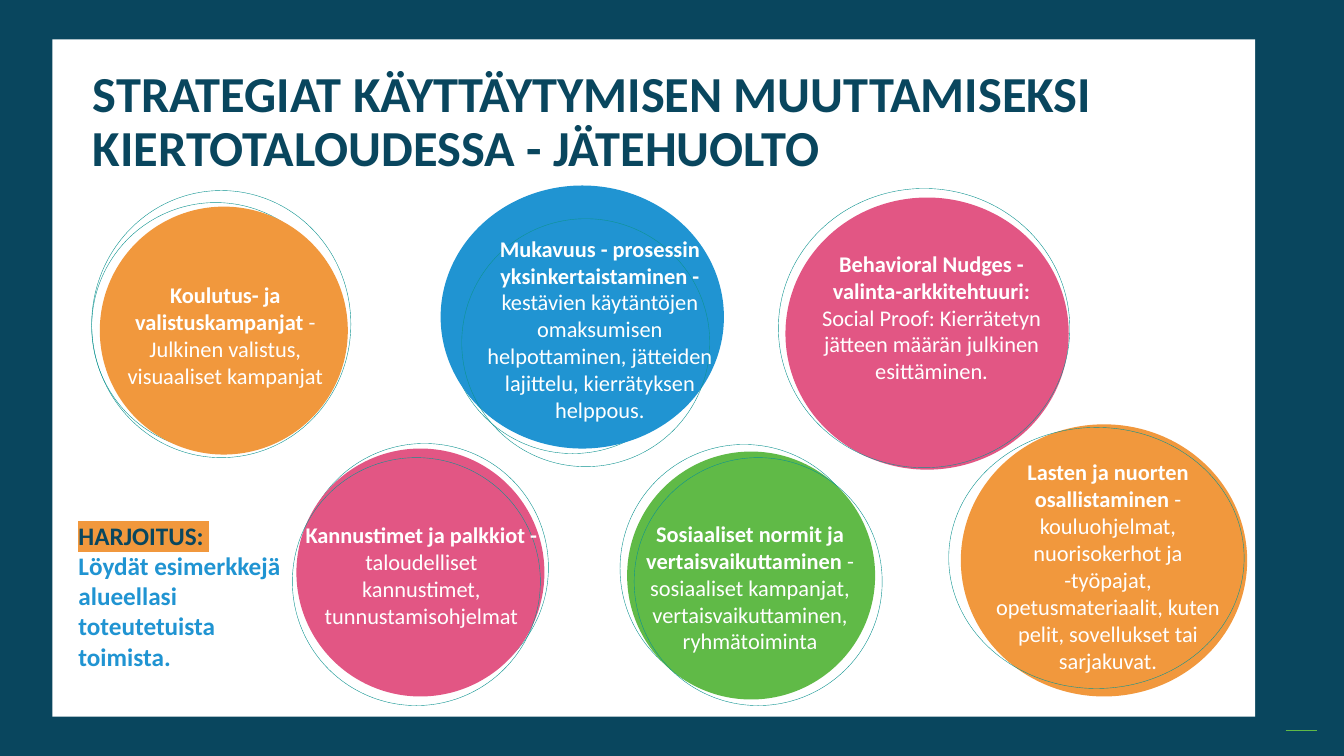
from lxml.etree import SubElement
from pptx import Presentation
from pptx.dml.color import RGBColor
from pptx.enum.shapes import MSO_CONNECTOR, MSO_SHAPE
from pptx.enum.text import MSO_ANCHOR, MSO_AUTO_SIZE, PP_ALIGN
from pptx.oxml.ns import qn
from pptx.util import Inches, Pt

NAVY = RGBColor(0x09, 0x46, 0x5E)
WHITE = RGBColor(0xFF, 0xFF, 0xFF)
TEAL = RGBColor(0x0D, 0x93, 0x90)
ORANGE = RGBColor(0xF1, 0x98, 0x3D)
PINK = RGBColor(0xE2, 0x56, 0x84)
BLUE = RGBColor(0x20, 0x94, 0xD2)
GREEN = RGBColor(0x60, 0xBA, 0x47)
FONT = "Calibri"
SIZE = 2.46

# Each bubble: colour, disc box, back ring, front ring and text box (relative to the disc), bold text, plain text
BUBBLES = [
    (ORANGE, (0.99, 2.05, SIZE, SIZE), (-0.08, -0.04, SIZE, SIZE),
     (-0.08, -0.16, 2.57, 2.65), (-0.03, 0.69, 2.55, 1.18),
     "Koulutus- ja valistuskampanjat ", "- Julkinen valistus, visuaaliset kampanjat"),
    (PINK, (2.94, 4.45, SIZE, SIZE), (0.04, -0.05, SIZE, SIZE),
     (-0.04, 0.09, SIZE, SIZE), (-0.01, 0.67, 2.5, 0.91),
     "Kannustimet ja palkkiot - ", "taloudelliset kannustimet, tunnustamisohjelmat"),
    (BLUE, (4.37, 1.84, 2.81, 2.61), (0.08, 0.2, SIZE, SIZE),
     (0.21, 0.33, SIZE, SIZE), (0.35, 0.44, SIZE, 1.99),
     "Mukavuus - prosessin yksinkertaistaminen - ",
     "kestävien käytäntöjen omaksumisen helpottaminen, jätteiden lajittelu, kierrätyksen helppous."),
    (ORANGE, (9.53, 4.21, 2.84, 2.7), (0.21, 0.13, SIZE, SIZE),
     (-0.12, 0.03, 2.93, 2.59), (0.23, 0.29, SIZE, 2.32),
     "Lasten ja nuorten osallistaminen ",
     "- kouluohjelmat, nuorisokerhot ja -työpajat, opetusmateriaalit, kuten pelit, sovellukset tai sarjakuvat."),
    (GREEN, (6.22, 4.48, SIZE, SIZE), (-0.07, -0.07, SIZE, SIZE),
     (0.07, 0.06, SIZE, SIZE), (-0.01, 0.63, SIZE, 1.78),
     "Sosiaaliset normit ja vertaisvaikuttaminen ",
     "- sosiaaliset kampanjat, vertaisvaikuttaminen, ryhmätoiminta"),
    (PINK, (7.79, 1.96, 2.81, 2.7), (0.11, 0.07, 2.59, SIZE),
     (-0.07, -0.09, 2.89, 2.77), (0.22, 0.47, SIZE, 2.59),
     "Behavioral Nudges - valinta-arkkitehtuuri: ",
     "Social Proof: Kierrätetyn jätteen määrän julkinen esittäminen."),
]


def set_font(paragraph, size, color, bold=None):
    """Give a whole paragraph its font."""
    font = paragraph.font
    font.name, font.size, font.bold = FONT, Pt(size), bold
    font.color.rgb = color


def add_filled(slide, kind, box, color):
    """Add a borderless filled shape."""
    shape = slide.shapes.add_shape(kind, *map(Inches, box))
    shape.shadow.inherit = False
    shape.fill.solid()
    shape.fill.fore_color.rgb = color
    shape.line.fill.background()


def add_ring(slide, box):
    """Add a thin unfilled oval."""
    ring = slide.shapes.add_shape(MSO_SHAPE.OVAL, *map(Inches, box))
    ring.shadow.inherit = False
    ring.fill.background()
    ring.line.color.rgb = TEAL
    ring.line.width = Pt(0.28)


def add_text_frame(slide, box):
    """Add a wrapping text box and return its frame."""
    frame = slide.shapes.add_textbox(*map(Inches, box)).text_frame
    frame.word_wrap = True
    return frame


def add_frame(slide, width, height):
    """Draw the navy border, the white panel and the corner dash."""
    add_filled(slide, MSO_SHAPE.RECTANGLE, (0, 0, width, height), NAVY)
    add_filled(slide, MSO_SHAPE.RECTANGLE, (0.52, 0.39, 11.93, 6.72), WHITE)
    dash_y = Inches(height - 0.25)
    dash = slide.shapes.add_connector(
        MSO_CONNECTOR.STRAIGHT, Inches(width - 0.58), dash_y, Inches(width - 0.27), dash_y)
    dash.line.color.rgb = GREEN
    dash.line.width = Pt(1)
    SubElement(dash._element.spPr, qn("a:effectLst"))


def add_title(slide, box, text):
    """Place and format the title placeholder above the frame."""
    title = slide.shapes.title
    title.left, title.top, title.width, title.height = map(Inches, box)
    slide.shapes._spTree.append(title._element)
    frame = title.text_frame
    frame.text = text
    frame.word_wrap = True
    frame.auto_size = MSO_AUTO_SIZE.NONE
    frame.vertical_anchor = MSO_ANCHOR.TOP
    paragraph = frame.paragraphs[0]
    paragraph.alignment = PP_ALIGN.LEFT
    paragraph.line_spacing = 0.9
    set_font(paragraph, 36, NAVY, True)


def add_bubble(slide, color, box, back_ring, front_ring, text_box, heading, detail):
    """Draw a disc between two rings, with its text on top."""
    def within(part):
        left, top, width, height = part
        return box[0] + left, box[1] + top, width, height

    add_ring(slide, within(back_ring))
    add_filled(slide, MSO_SHAPE.OVAL, box, color)
    add_ring(slide, within(front_ring))
    paragraph = add_text_frame(slide, within(text_box)).paragraphs[0]
    paragraph.alignment = PP_ALIGN.CENTER
    set_font(paragraph, 16, WHITE)
    for text, bold in ((heading, True), (detail, False)):
        run = paragraph.add_run()
        run.text = text
        run.font.bold = bold


def add_exercise(slide, box, label, task):
    """Write the exercise with a highlighted label."""
    frame = add_text_frame(slide, box)
    heading = frame.paragraphs[0]
    set_font(heading, 18, NAVY, True)
    run = heading.add_run()
    run.text = label
    highlight = SubElement(run._r.get_or_add_rPr(), qn("a:highlight"))
    SubElement(highlight, qn("a:srgbClr"), val=str(ORANGE))
    body = frame.add_paragraph()
    body.text = task
    set_font(body, 18, BLUE, True)


def main():
    """Build and save the slide."""
    width, height = 13.33, 7.5
    presentation = Presentation()
    presentation.slide_width, presentation.slide_height = Inches(width), Inches(height)
    slide = presentation.slides.add_slide(presentation.slide_layouts[5])
    add_frame(slide, width, height)
    add_title(slide, (0.82, 0.63, 10.99, 0.88),
              "STRATEGIAT KÄYTTÄYTYMISEN MUUTTAMISEKSI KIERTOTALOUDESSA - JÄTEHUOLTO")
    for bubble in BUBBLES:
        add_bubble(slide, *bubble)
    add_exercise(slide, (0.68, 5.11, 2.21, 1.92), "HARJOITUS: ",
                 "Löydät esimerkkejä alueellasi toteutetuista toimista.")
    presentation.save("out.pptx")


if __name__ == "__main__":
    main()
